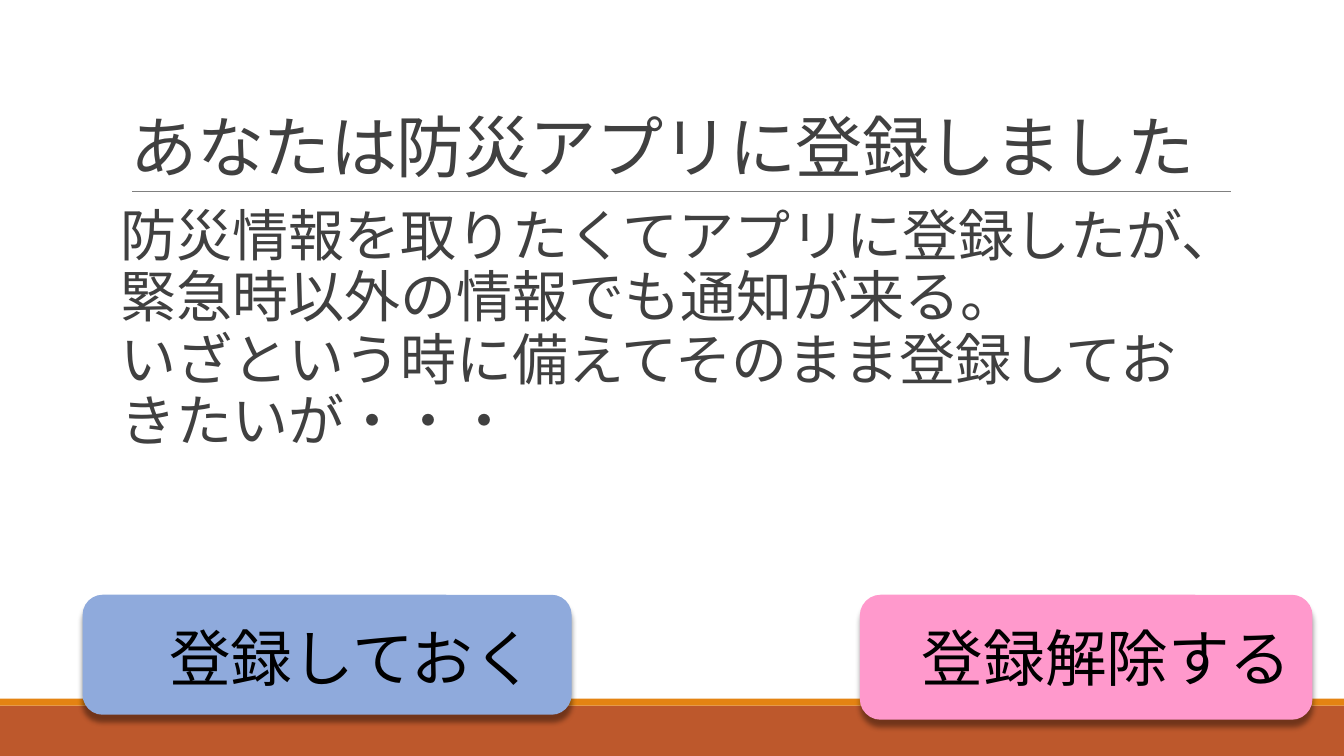
from lxml.etree import SubElement
from pptx import Presentation
from pptx.dml.color import RGBColor
from pptx.enum.lang import MSO_LANGUAGE_ID as Language
from pptx.enum.shapes import MSO_CONNECTOR as Connector, MSO_SHAPE as Shape
from pptx.enum.text import MSO_ANCHOR as Anchor, MSO_AUTO_SIZE as AutoSize, PP_ALIGN as Align
from pptx.oxml.ns import qn
from pptx.util import Inches, Pt

FONT = "Noto Sans CJK JP"
WIDTH, HEIGHT = Inches(13.333), Inches(7.5)
COLORS = {
    "base": "BD582C",
    "stripe": "E48312",
    "rule": "808080",
    "text": "404040",
    "keep": "8FAADC",
    "cancel": "FF99CC",
    "black": "000000",
}

TITLE = "あなたは防災アプリに登録しました"
STORY = [
    "防災情報を取りたくてアプリに登録したが、緊急時以外の情報でも通知が来る。",
    "いざという時に備えてそのまま登録しておきたいが・・・",
]


def color(name):
    return RGBColor.from_string(COLORS[name])


def area(left, top, width, height):
    """Turn percentages of the slide's size into lengths."""
    return (int(WIDTH * left / 100), int(HEIGHT * top / 100),
            int(WIDTH * width / 100), int(HEIGHT * height / 100))


def add_block(page, kind, place, fill):
    block = page.shapes.add_shape(kind, *area(*place))
    block.shadow.inherit = False
    block.fill.solid()
    block.fill.fore_color.rgb = color(fill)
    block.line.fill.background()
    return block


def add_shadow(block):
    effects = block._element.spPr.find(qn("a:effectLst"))
    shadow = SubElement(effects, qn("a:outerShdw"), blurRad=str(Pt(4)),
                        dist=str(Pt(5)), dir="5400000", algn="ctr", rotWithShape="0")
    tint = SubElement(shadow, qn("a:srgbClr"), val=COLORS["black"])
    SubElement(tint, qn("a:alpha"), val="40000")


def add_rule(page, left, right, top):
    start_x, start_y, end_x, _ = area(left, top, right, 0)
    rule = page.shapes.add_connector(Connector.STRAIGHT, start_x, start_y, end_x, start_y)
    rule.line.color.rgb = color("rule")
    rule.line.width = Pt(0.5)
    SubElement(rule._element.spPr, qn("a:effectLst"))


def add_text(page, place, lines, size, ink="text", align=Align.LEFT, spacing=None,
             after=0, anchor=Anchor.TOP, side_inset=0.1, tracking=None, grow=False):
    box = page.shapes.add_textbox(*area(*place))
    frame = box.text_frame
    frame.word_wrap = True
    frame.auto_size = AutoSize.SHAPE_TO_FIT_TEXT if grow else AutoSize.NONE
    frame.vertical_anchor = anchor
    frame.margin_left = frame.margin_right = Inches(side_inset)
    for index, line in enumerate(lines):
        para = frame.add_paragraph() if index else frame.paragraphs[0]
        para.alignment = align
        para.line_spacing = spacing
        para.space_after = Pt(after)
        span = para.add_run()
        span.text = line
        span.font.name = FONT
        span.font.size = Pt(size)
        span.font.color.rgb = color(ink)
        span.font.language_id = Language.JAPANESE
        properties = span.font._element
        SubElement(properties, qn("a:ea"), typeface=FONT)
        if tracking is not None:
            properties.set("spc", str(int(tracking * 100)))


def add_choice(page, place, fill, label, label_left, label_width, align):
    add_shadow(add_block(page, Shape.ROUNDED_RECTANGLE, place, fill))
    add_text(page, (label_left, 81.33, label_width, 11.2), [label], 44,
             ink="black", align=align, grow=True)


def main():
    deck = Presentation()
    deck.slide_width, deck.slide_height = WIDTH, HEIGHT
    page = deck.slides.add_slide(deck.slide_layouts[6])

    # Footer bands and title rule
    add_block(page, Shape.RECTANGLE, (0, 93.33, 100, 6.67), "base")
    add_block(page, Shape.RECTANGLE, (0, 92.4, 100, 0.93), "stripe")
    add_rule(page, 9.83, 91.58, 25.33)

    # Title and story
    add_text(page, (9, 4.13, 82.5, 21.2), [TITLE], 48, spacing=0.85,
             anchor=Anchor.BOTTOM, tracking=-0.5)
    add_text(page, (9, 26.93, 82.5, 58.67), STORY, 40, spacing=0.9,
             after=2, side_inset=0)

    # The two choices
    add_choice(page, (6.15, 78.67, 36.38, 15.87), "keep",
               "登録しておく", 11.85, 30.6, Align.LEFT)
    add_choice(page, (63.98, 78.67, 33.68, 16.53), "cancel",
               "登録解除する", 67.13, 30.45, Align.CENTER)

    deck.save("out.pptx")


if __name__ == "__main__":
    main()
